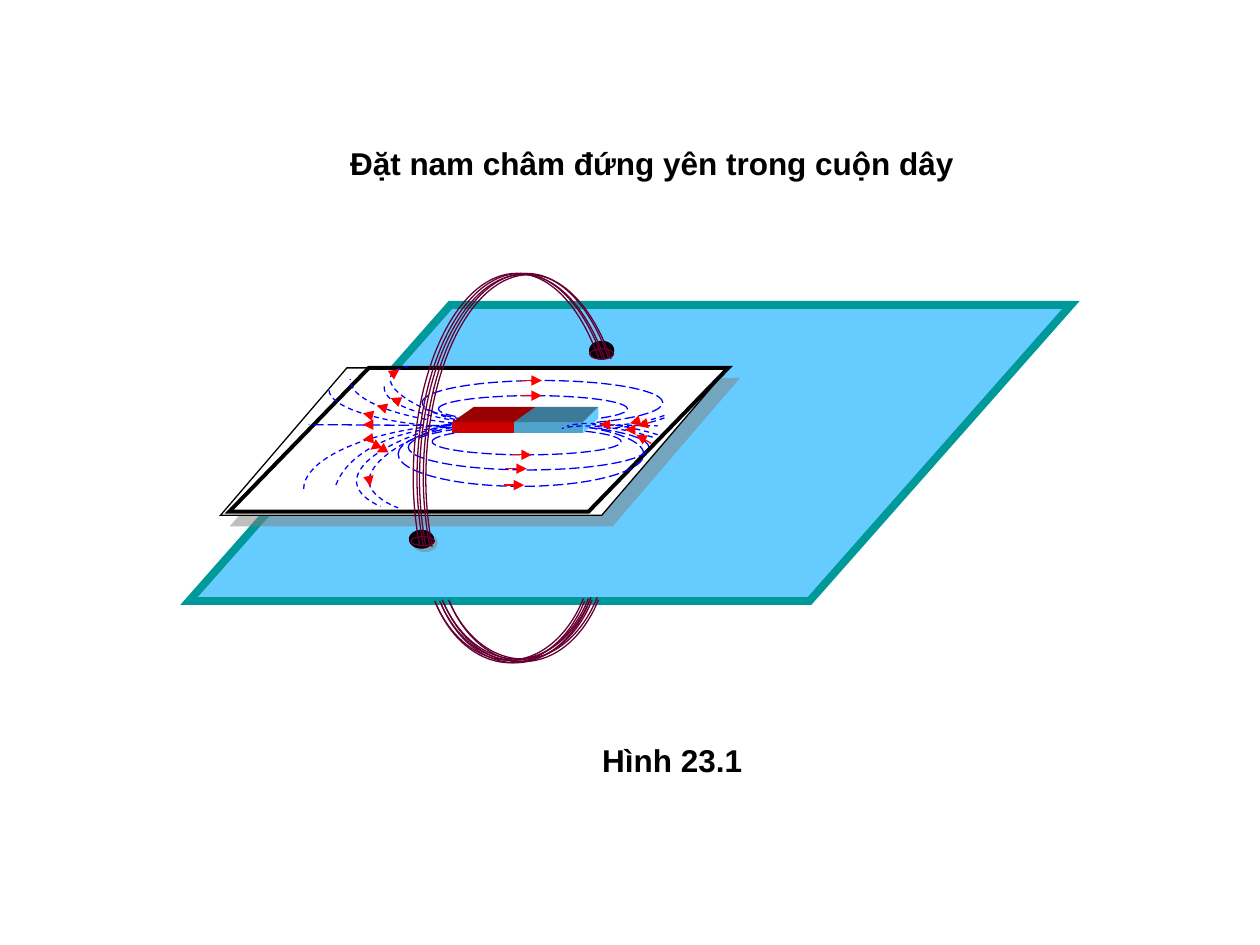
from copy import deepcopy

from pptx import Presentation
from pptx.dml.color import RGBColor
from pptx.enum.dml import MSO_LINE
from pptx.enum.shapes import MSO_CONNECTOR, MSO_SHAPE
from pptx.enum.text import MSO_ANCHOR, MSO_AUTO_SIZE, PP_ALIGN
from pptx.oxml import parse_xml
from pptx.oxml.ns import nsdecls, qn
from pptx.util import Inches, Pt

LONG, DASH = MSO_LINE.LONG_DASH, MSO_LINE.DASH
SLANT, OVAL = MSO_SHAPE.PARALLELOGRAM, MSO_SHAPE.OVAL
STRAIGHT = MSO_CONNECTOR.STRAIGHT
MIDDLE, FIXED, CENTER = MSO_ANCHOR.MIDDLE, MSO_AUTO_SIZE.NONE, PP_ALIGN.CENTER
BLACK, WHITE, BLUE, RED, SKY, WIRE = "000000", "FFFFFF", "0000FF", "FF0000", "66CCFF", "660033"

TITLE = ("Đặt nam châm đứng yên trong cuộn dây", (2.55, 1.09, 5.25, 0.4))
CAPTION = ("Hình 23.1", (3.75, 5.83, 3.17, 0.4))
SHEETS = [
    ((1.5, 2.42, 7, 2.35), 0.883, SKY, "009999", 4.5, 0),
    ((1.75, 2.92, 4.03, 1.17), 0.858, WHITE, BLACK, 0.75, 8.5),
    ((1.82, 2.92, 3.96, 1.14), 0.972, WHITE, BLACK, 2.25, 0),
]
LOOPS = [
    (3.16, 3.35, 1.95, 0.51), (3.48, 3.14, 1.5, 0.21), (3.35, 3.02, 1.91, 0.35),
    (3.24, 3.37, 1.91, 0.36), (3.43, 3.4, 1.5, 0.21),
]
AXES = [((3.92, 3.38), (2.45, 3.37), LONG), ((4.69, 3.37), (5.22, 3.38), DASH)]
LEFT = [
    [(3.56, 3.37), (2.9, 3.42), (2.4, 3.65), (2.41, 3.89)],
    [(3.62, 3.39), (3.14, 3.39), (2.74, 3.6), (2.66, 3.87)],
    [(3.86, 3.4), (3.17, 3.4), (2.61, 3.26), (2.61, 3.09)],
    [(3.74, 3.37), (3.2, 3.34), (2.77, 3.18), (2.78, 3.01)],
    [(3.85, 3.37), (3.37, 3.32), (3.05, 3.21), (3.05, 3.08),
     (3.05, 3.07), (3.05, 3.06), (3.05, 3.06)],
    [(3.59, 3.36), (3.12, 3.48), (2.82, 3.66), (2.83, 3.83),
     (2.84, 3.91), (2.91, 3.97), (3.02, 4.02)],
    [(3.67, 3.34), (3.2, 3.47), (2.91, 3.67), (2.93, 3.84),
     (2.95, 3.91), (3.03, 3.98), (3.16, 4.03)],
    [(3.82, 3.37), (3.74, 3.36), (3.66, 3.34), (3.57, 3.32), (3.28, 3.23),
     (3.07, 3.09), (3.1, 2.99), (3.11, 2.95), (3.16, 2.92), (3.24, 2.91)],
]
LOW = [(5.18, 3.47), (4.88, 3.38), (4.62, 3.36), (4.46, 3.4)]
HIGH = [(4.74, 3.38), (4.95, 3.38), (5.14, 3.35), (5.29, 3.29)]
RIGHT = [(LOW, 0, 0), (HIGH, 0, 0), (LOW, 0.04, -0.02), (HIGH, 0, 0.02)]
ARROWS = [
    (2.93, 3.37, 2.88, 3.37), (2.95, 3.48, 2.88, 3.49), (3.03, 3.57, 2.99, 3.59),
    (4.01, 3.72, 4.18, 3.72), (2.98, 3.54, 2.94, 3.57), (2.92, 3.29, 2.88, 3.28),
    (3.06, 3.24, 2.99, 3.22), (3.15, 3.18, 3.1, 3.16), (4.06, 3.61, 4.22, 3.61),
    (3.1, 2.98, 3.17, 2.93), (4.13, 3.14, 4.3, 3.14), (2.93, 3.81, 2.94, 3.86),
    (4.13, 3.02, 4.3, 3.02), (5.17, 3.52, 5.05, 3.45), (5.05, 3.41, 4.96, 3.41),
    (5.17, 3.35, 5.06, 3.38), (5.07, 3.34, 5, 3.36), (4.88, 3.37, 4.76, 3.37),
    (4, 3.85, 4.16, 3.85),
]
POLES = [(3.59, RED), (4.08, SKY)]
WIDE, TALL, FRONT, DEEP, RISE = 0.55, 0.09, 3.35, 0.12, 0.12
LEAN = 0.17
SHADES = ["darkenLess", "darken", "norm"]
HOLES = [((3.25, 4.21, 0.19, 0.14), 2.8), ((4.68, 2.71, 0.19, 0.14), 0)]
RINGS = [(3.26, 4.26, 0.19, 0.07), (4.68, 2.77, 0.19, 0.08)]
ARCH = [(4.8, 2.85), (4.65, 2.43), (4.41, 2.18), (4.15, 2.18), (3.7, 2.18),
        (3.33, 2.91), (3.33, 3.81), (3.33, 3.99), (3.35, 4.17), (3.38, 4.34)]
BOWL = [(3.57, 4.78), (3.69, 5.07), (3.92, 5.25), (4.16, 5.25),
        (4.4, 5.25), (4.63, 5.06), (4.75, 4.76)]
COIL = [(ARCH, x, y) for x, y in
        [(0, 0), (-0.02, -0.01), (0.05, 0), (-0.05, -0.01), (0.03, -0.01)]]
COIL += [(BOWL, x - d, y - 2 * d) for d in (0, 0.01)
         for x, y in [(0, 0), (-0.05, 0), (-0.07, 0.01), (-0.11, 0.01)]]


def tint(text):
    return RGBColor.from_string(text)


def node(tag, rest=""):
    return parse_xml(f'<a:{tag} {nsdecls("a")} {rest}/>')


def box(area):
    return [Inches(n) for n in area]


def stroke(line, hue, size=0.75, dash=None):
    line.color.rgb = tint(hue)
    line.width = Pt(size)
    if dash:
        line.dash_style = dash


def dress(shape, fill=None, hue=None, size=0.75, dash=None, drop=0):
    shape.shadow.inherit = False
    if fill:
        shape.fill.solid()
        shape.fill.fore_color.rgb = tint(fill)
    else:
        shape.fill.background()
    if hue:
        stroke(shape.line, hue, size, dash)
    else:
        shape.line.fill.background()
    if drop:
        shape._element.spPr.find(qn("a:effectLst")).append(parse_xml(
            f'<a:outerShdw {nsdecls("a")} dist="{Pt(drop)}" dir="2700000">'
            '<a:srgbClr val="808080"><a:alpha val="50000"/></a:srgbClr></a:outerShdw>'))


def form(group, kind, area, **look):
    shape = group.add_shape(kind, *box(area))
    dress(shape, **look)
    return shape


def curve(group, knots, hue, dash=None, dx=0, dy=0):
    """Draw joined cubic curves, moved by dx and dy."""
    first, *rest = [box((x + dx, y + dy)) for x, y in knots]
    pen = group.build_freeform(*first, scale=1.0)
    pen.add_line_segments(rest, close=False)
    shape = pen.convert_to_shape()
    dress(shape, hue=hue, dash=dash)
    legs = list(shape._element.iter(qn("a:lnTo")))
    for i in range(0, len(legs), 3):
        bend = node("cubicBezTo")
        legs[i].addprevious(bend)
        for leg in legs[i:i + 3]:
            bend.append(leg[0])
            leg.getparent().remove(leg)


def rule(group, start, end, hue, dash=None, head=False):
    link = group.add_connector(STRAIGHT, *box(start), *box(end))
    stroke(link.line, hue, dash=dash)
    if head:
        link.line._get_or_add_ln().append(node("tailEnd", 'type="triangle"'))
    link._element.spPr.append(node("effectLst"))


def magnet(group, left, hue):
    """Draw one pole as a bar with a shaded front, lid and end."""
    right, back, base = left + WIDE, FRONT - RISE, FRONT + TALL
    far = right + DEEP
    faces = [
        [(left, FRONT), (right, FRONT), (right, base), (left, base)],
        [(left, FRONT), (left + LEAN, back), (far, back), (right, FRONT)],
        [(right, FRONT), (far, back), (far, back + TALL), (right, base)],
    ]
    pen = group.build_freeform(*box(faces[0][0]), scale=1.0)
    for n, face in enumerate(faces):
        first, *rest = [box(dot) for dot in face]
        if n:
            pen.move_to(*first)
        pen.add_line_segments(rest, close=True)
    shape = pen.convert_to_shape()
    dress(shape, fill=hue)
    whole = next(shape._element.iter(qn("a:path")))
    size = len(whole) // len(faces)
    for n, shade in enumerate(SHADES):
        part = deepcopy(whole)
        for i, kid in enumerate(list(part)):
            if i // size != n:
                part.remove(kid)
        part.set("fill", shade)
        whole.addprevious(part)
    whole.getparent().remove(whole)


def label(shape, text, area):
    shape.left, shape.top, shape.width, shape.height = box(area)
    frame = shape.text_frame
    frame.text = text
    frame.word_wrap, frame.auto_size, frame.vertical_anchor = True, FIXED, MIDDLE
    para = frame.paragraphs[0]
    para.alignment = CENTER
    font = para.font
    font.name, font.size, font.bold = "Arial", Pt(18), True
    font.color.rgb = tint(BLACK)


def main():
    deck = Presentation()
    deck.slide_width, deck.slide_height = Inches(10), Inches(7.5)
    slide = deck.slides.add_slide(deck.slide_layouts[5])
    label(slide.shapes.title, *TITLE)
    group = slide.shapes.add_group_shape().shapes
    for area, slant, fill, hue, size, drop in SHEETS:
        sheet = form(group, SLANT, area, fill=fill, hue=hue, size=size, drop=drop)
        sheet.adjustments[0] = slant
        sheet.line._get_or_add_ln().append(node("miter", 'lim="800000"'))
    for area in LOOPS:
        form(group, OVAL, area, hue=BLUE, dash=LONG)
    for start, end, dash in AXES:
        rule(group, start, end, BLUE, dash)
    for knots in LEFT:
        curve(group, knots, BLUE, DASH)
    for left, hue in POLES:
        magnet(group, left, hue)
    for knots, dx, dy in RIGHT:
        curve(group, knots, BLUE, DASH, dx, dy)
    for spot in ARROWS:
        rule(group, spot[:2], spot[2:], RED, head=True)
    for area, drop in HOLES:
        form(group, OVAL, area, fill=BLACK, hue=BLACK, drop=drop)
    for knots, dx, dy in COIL:
        curve(group, knots, WIRE, dx=dx, dy=dy)
    for area in RINGS:
        form(group, OVAL, area, hue=WIRE)
    label(slide.shapes.add_textbox(0, 0, 0, 0), *CAPTION)
    deck.save("out.pptx")


if __name__ == "__main__":
    main()
